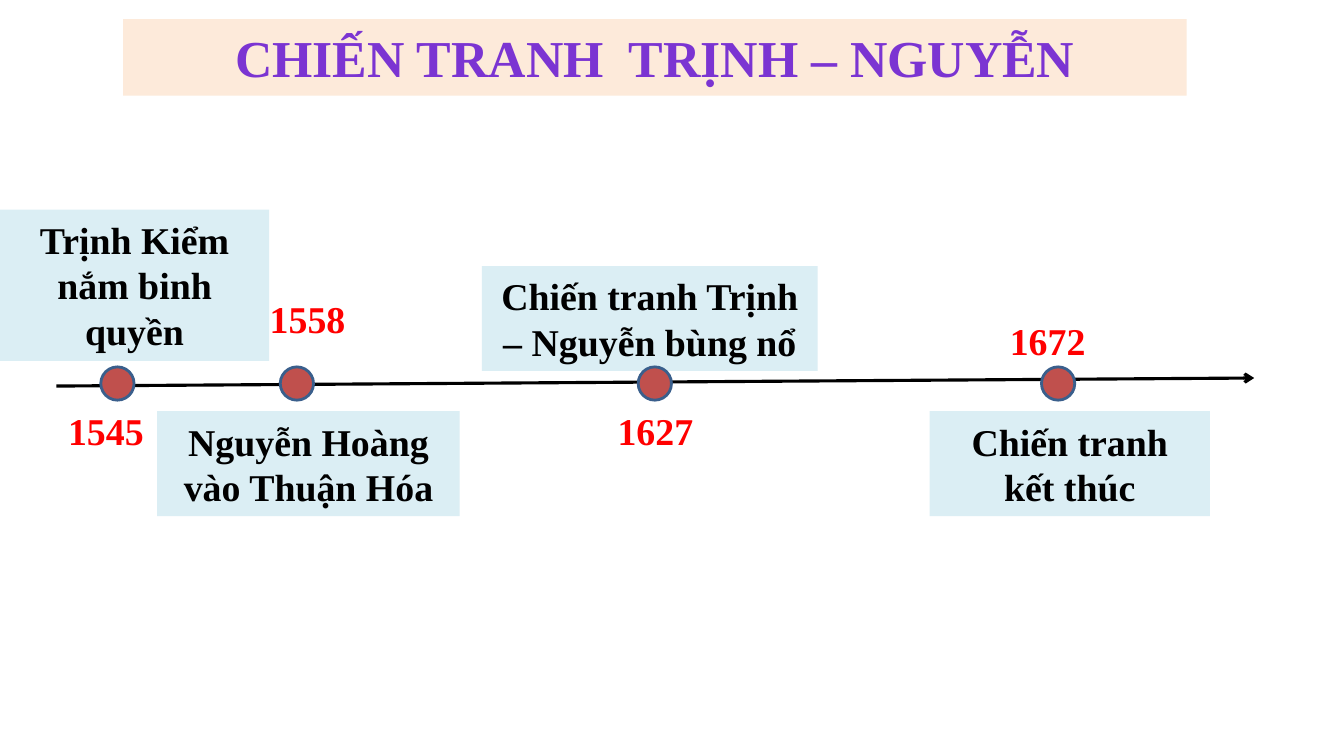
from dataclasses import dataclass

from lxml import etree
from pptx import Presentation
from pptx.dml.color import RGBColor
from pptx.enum.shapes import MSO_CONNECTOR, MSO_SHAPE
from pptx.enum.text import MSO_ANCHOR, MSO_AUTO_SIZE, PP_ALIGN
from pptx.oxml.ns import qn
from pptx.slide import Slide
from pptx.util import Inches, Pt

RECTANGLE = MSO_SHAPE.RECTANGLE
OVAL = MSO_SHAPE.OVAL
STRAIGHT = MSO_CONNECTOR.STRAIGHT
CENTER = PP_ALIGN.CENTER
TOP = MSO_ANCHOR.TOP
NO_AUTOFIT = MSO_AUTO_SIZE.NONE

COLORS = {
    "title_fill": "FDEADA",
    "title_text": "7B34D2",
    "event_fill": "DBEEF4",
    "event_text": "000000",
    "year_text": "FF0000",
    "axis": "000000",
    "marker_fill": "C0504D",
    "marker_line": "3A5F8C",
}
FRAME_FORMAT = {
    "word_wrap": True,
    "auto_size": NO_AUTOFIT,
    "vertical_anchor": TOP,
    "margin_left": Inches(0.13),
    "margin_right": Inches(0.13),
    "margin_top": Inches(0.07),
    "margin_bottom": Inches(0.07),
}
FONT_FORMAT = {"name": "Times New Roman", "bold": True}
TITLE_SIZE, TEXT_SIZE = 37, 27
YEAR_WIDTH, YEAR_HEIGHT = 1.22, 0.58
MARKER_TOP, MARKER_SIZE = 3.64, 0.33


@dataclass(frozen=True)
class Box:
    left: float
    top: float
    width: float
    height: float

    def lengths(self) -> list[Inches]:
        return [Inches(value) for value in (self.left, self.top, self.width, self.height)]


@dataclass(frozen=True)
class Event:
    year: str
    year_left: float
    year_top: float
    marker_left: float
    description: str
    box: Box


EVENTS = [
    Event("1545", 0.44, 3.97, 1.00, "Trịnh Kiểm nắm binh quyền", Box(0, 2.08, 2.67, 1.5)),
    Event("1558", 2.44, 2.86, 2.78, "Nguyễn Hoàng vào Thuận Hóa", Box(1.56, 4.08, 3, 1.04)),
    Event("1627", 5.89, 3.97, 6.33, "Chiến tranh Trịnh – Nguyễn bùng nổ", Box(4.78, 2.64, 3.33, 1.04)),
    Event("1672", 9.78, 3.08, 10.33, "Chiến tranh kết thúc", Box(9.22, 4.08, 2.78, 1.04)),
]


def color(name: str) -> RGBColor:
    return RGBColor.from_string(COLORS[name])


def write_text(shape, text: str, size: float, color_name: str) -> None:
    frame = shape.text_frame
    for attribute, value in FRAME_FORMAT.items():
        setattr(frame, attribute, value)
    paragraph = frame.paragraphs[0]
    paragraph.alignment = CENTER
    run = paragraph.add_run()
    run.text = text
    for attribute, value in FONT_FORMAT.items():
        setattr(run.font, attribute, value)
    run.font.size = Pt(size)
    run.font.color.rgb = color(color_name)


def add_filled_shape(slide: Slide, kind: MSO_SHAPE, box: Box, fill: str):
    """Add a preset shape with a plain fill and neither line nor shadow."""
    shape = slide.shapes.add_shape(kind, *box.lengths())
    shape.shadow.inherit = False
    shape.fill.solid()
    shape.fill.fore_color.rgb = color(fill)
    shape.line.fill.background()
    return shape


def add_title(slide: Slide) -> None:
    banner = add_filled_shape(slide, RECTANGLE, Box(1.22, 0.19, 10.55, 0.76), "title_fill")
    write_text(banner, "CHIẾN TRANH  TRỊNH – NGUYỄN", TITLE_SIZE, "title_text")


def add_time_axis(slide: Slide) -> None:
    axis = slide.shapes.add_connector(
        STRAIGHT, Inches(0.56), Inches(3.83), Inches(12.44), Inches(3.75)
    )
    axis.line.color.rgb = color("axis")
    axis.line.width = Pt(2.25)
    etree.SubElement(axis.line._get_or_add_ln(), qn("a:tailEnd"), type="arrow")
    etree.SubElement(axis._element.spPr, qn("a:effectLst"))


def add_event(slide: Slide, event: Event) -> None:
    description = add_filled_shape(slide, RECTANGLE, event.box, "event_fill")
    write_text(description, event.description, TEXT_SIZE, "event_text")

    year_box = Box(event.year_left, event.year_top, YEAR_WIDTH, YEAR_HEIGHT)
    year = slide.shapes.add_textbox(*year_box.lengths())
    write_text(year, event.year, TEXT_SIZE, "year_text")

    marker_box = Box(event.marker_left, MARKER_TOP, MARKER_SIZE, MARKER_SIZE)
    marker = add_filled_shape(slide, OVAL, marker_box, "marker_fill")
    marker.line.color.rgb = color("marker_line")
    marker.line.width = Pt(2)


def main() -> None:
    presentation = Presentation()
    presentation.slide_width = Inches(13.33)
    presentation.slide_height = Inches(7.5)
    slide = presentation.slides.add_slide(presentation.slide_layouts[6])
    add_time_axis(slide)
    add_title(slide)
    for event in EVENTS:
        add_event(slide, event)
    presentation.save("out.pptx")


if __name__ == "__main__":
    main()
